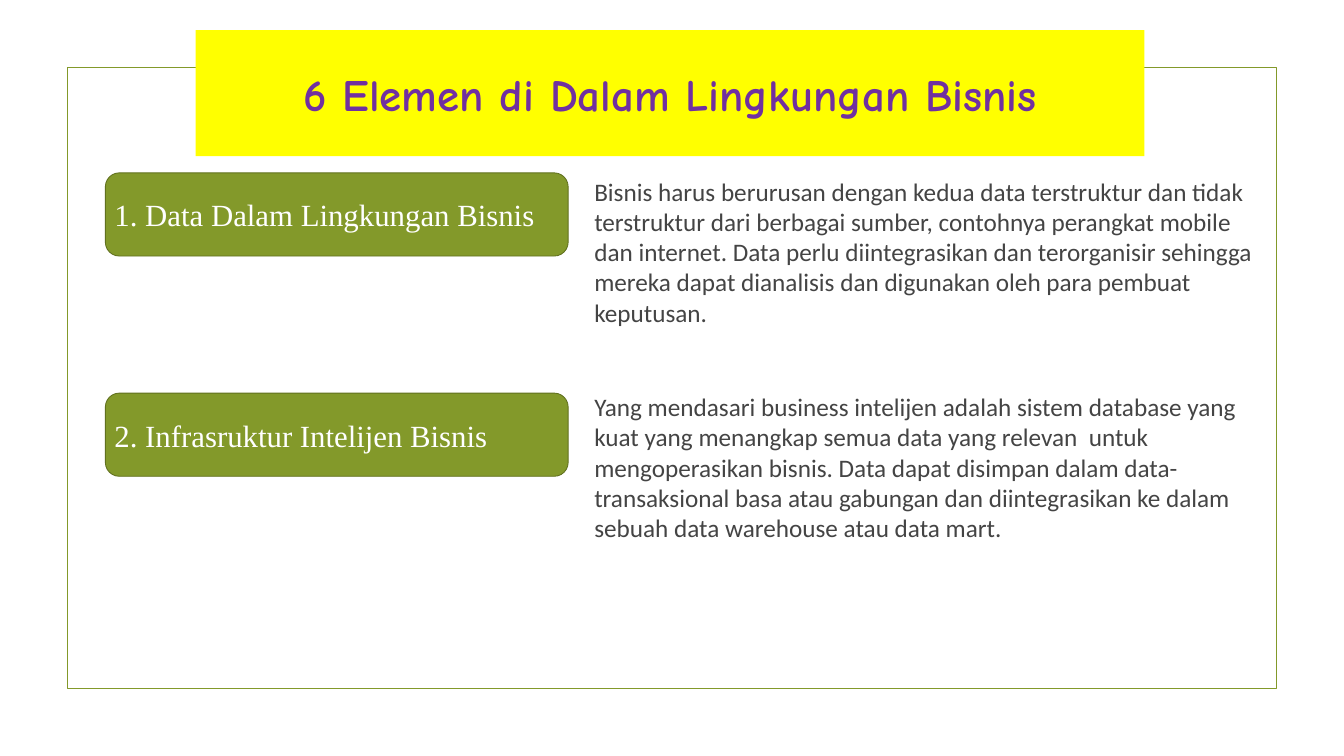
"""Build the slide on elements of the business environment."""
from pptx import Presentation
from pptx.dml.color import RGBColor
from pptx.enum.shapes import MSO_SHAPE as Shape
from pptx.enum.text import MSO_ANCHOR as Anchor, PP_ALIGN as Align
from pptx.util import Inches, Pt

COLORS = {
    "olive": "83992A",
    "dark_olive": "61711F",
    "yellow": "FFFF00",
    "purple": "7030A0",
    "white": "FFFFFF",
    "gray": "444444",
}


def add_box(kind, left, top, width, height, fill=None, line=None):
    shape = slide.shapes.add_shape(
        kind, Inches(left), Inches(top), Inches(width), Inches(height))
    shape.shadow.inherit = False
    if fill:
        shape.fill.solid()
        shape.fill.fore_color.rgb = RGBColor.from_string(COLORS[fill])
    else:
        shape.fill.background()
    if line:
        shape.line.color.rgb = RGBColor.from_string(COLORS[line])
        shape.line.width = Pt(1.25)
    else:
        shape.line.fill.background()
    return shape


def write_text(shape, text, *, font, size, color, bold=False,
               align=Align.LEFT, anchor=Anchor.MIDDLE):
    frame = shape.text_frame
    frame.word_wrap = True
    frame.vertical_anchor = anchor
    paragraph = frame.paragraphs[0]
    paragraph.alignment = align
    run = paragraph.add_run()
    run.text = text
    run.font.name = font
    run.font.size = Pt(size)
    run.font.bold = bold
    run.font.color.rgb = RGBColor.from_string(COLORS[color])


presentation = Presentation()
presentation.slide_width = Inches(26.66)
presentation.slide_height = Inches(15)
slide = presentation.slides.add_slide(presentation.slide_layouts[6])

add_box(Shape.RECTANGLE, 1.33, 1.33, 23.99, 12.33, line="olive")

title = add_box(Shape.RECTANGLE, 3.88, 0.6, 18.82, 2.5, fill="yellow")
write_text(title, "6 Elemen di Dalam Lingkungan Bisnis", font="Comic Neue",
           size=64, color="purple", bold=True, align=Align.CENTER)

elements = [
    ("1. Data Dalam Lingkungan Bisnis", 3.43, 3.44, 3.13,
     "Bisnis harus berurusan dengan kedua data terstruktur dan tidak "
     "terstruktur dari berbagai sumber, contohnya perangkat mobile dan "
     "internet. Data perlu diintegrasikan dan terorganisir sehingga mereka "
     "dapat dianalisis dan digunakan oleh para pembuat keputusan."),
    ("2. Infrasruktur Intelijen Bisnis", 7.8, 7.72, 3.74,
     "Yang mendasari business intelijen adalah sistem database yang kuat "
     "yang menangkap semua data yang relevan  untuk mengoperasikan bisnis. "
     "Data dapat disimpan dalam data- transaksional basa atau gabungan dan "
     "diintegrasikan ke dalam sebuah data warehouse atau data mart."),
]
for heading, heading_top, body_top, body_height, body in elements:
    label = add_box(Shape.ROUNDED_RECTANGLE, 2.09, heading_top, 9.18, 1.65,
                    fill="olive", line="dark_olive")
    write_text(label, heading, font="Times New Roman", size=44, color="white")
    description = slide.shapes.add_textbox(
        Inches(11.69), Inches(body_top), Inches(13.33), Inches(body_height))
    write_text(description, body, font="Calibri", size=36, color="gray",
               anchor=Anchor.TOP)

presentation.save("out.pptx")
